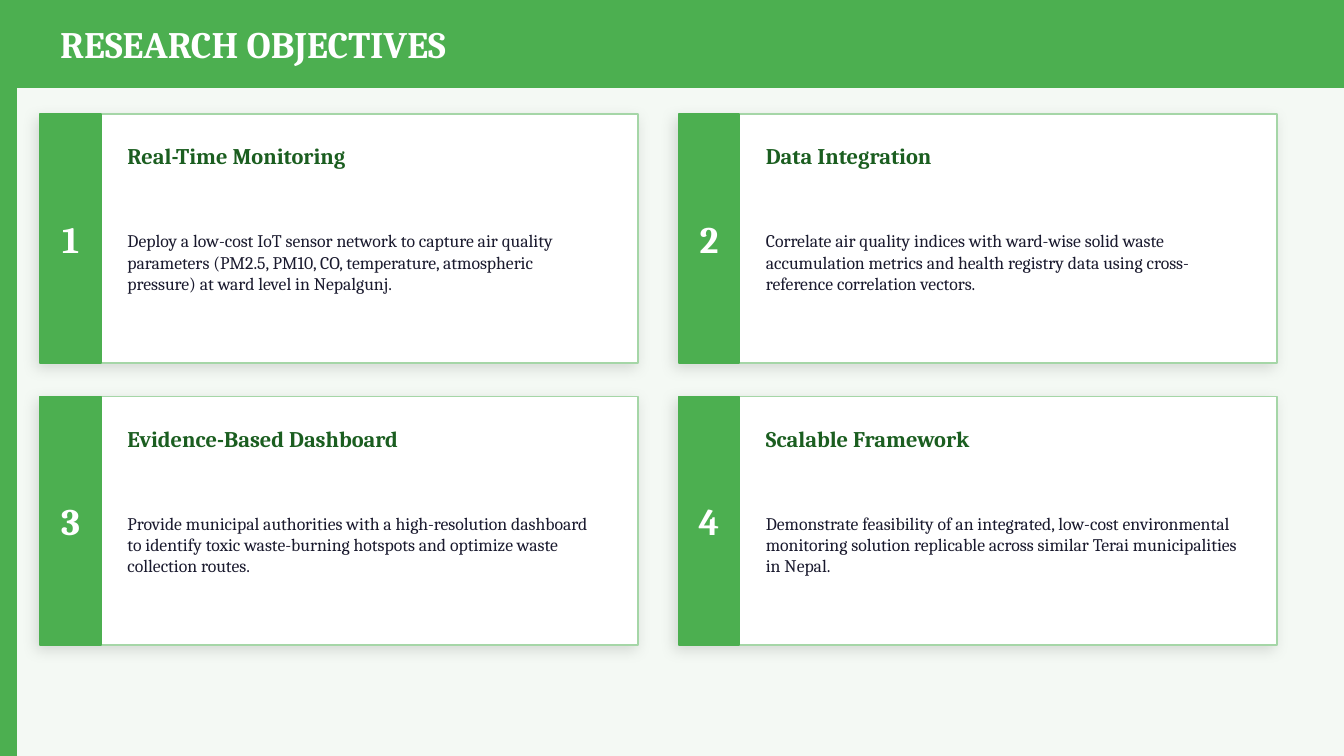
from lxml import etree
from pptx import Presentation
from pptx.dml.color import RGBColor
from pptx.enum.shapes import MSO_SHAPE
from pptx.enum.text import MSO_ANCHOR, PP_ALIGN
from pptx.oxml import parse_xml
from pptx.util import Pt

RECT = MSO_SHAPE.RECTANGLE
MIDDLE = MSO_ANCHOR.MIDDLE
LEFT, CENTER = PP_ALIGN.LEFT, PP_ALIGN.CENTER
PX = 4572
GREEN, PALE_GREEN, WHITE = "4CAF50", "A5D6A7", "FFFFFF"
SHADOW = (
    '<a:outerShdw xmlns:a="http://schemas.openxmlformats.org/drawingml/2006/main" '
    'blurRad="101600" dist="38100" dir="8100000" algn="bl" rotWithShape="0">'
    '<a:srgbClr val="000000"><a:alpha val="12000"/></a:srgbClr></a:outerShdw>'
)
HEADING = {"size": Pt(20), "bold": True, "name": "Cambria"}
CARD_TITLE = {"size": Pt(12), "bold": True, "name": "Cambria"}
BODY = {"size": Pt(9.5), "bold": False, "name": "Cambria"}

rgb = RGBColor.from_string
prs = Presentation()
prs.slide_width, prs.slide_height = 2000 * PX, 1125 * PX
s = prs.slides.add_slide(prs.slide_layouts[6])
s.background.fill.solid()
s.background.fill.fore_color.rgb = rgb("F4F9F4")


def add_rect(x, y, w, h, fill, line):
    sp = s.shapes.add_shape(RECT, x * PX, y * PX, w * PX, h * PX)
    sp.shadow.inherit = False
    sp.fill.solid()
    sp.fill.fore_color.rgb = rgb(fill)
    sp.line.color.rgb = rgb(line)
    sp.line.width = Pt(1)
    return sp


def add_text(x, y, w, h, text, fmt, color, align=LEFT):
    tf = s.shapes.add_textbox(x * PX, y * PX, w * PX, h * PX).text_frame
    tf.word_wrap = True
    tf.vertical_anchor = MIDDLE
    p = tf.paragraphs[0]
    p.alignment = align
    r = p.add_run()
    r.text = text
    for key, value in fmt.items():
        setattr(r.font, key, value)
    r.font.color.rgb = rgb(color)


add_rect(0, 0, 24, 1125, GREEN, GREEN)
add_rect(24, 0, 1976, 130, GREEN, GREEN)
add_text(70, 20, 1860, 90, "RESEARCH OBJECTIVES", HEADING, WHITE)

objectives = [
    ("Real-Time Monitoring",
     "Deploy a low-cost IoT sensor network to capture air quality parameters "
     "(PM2.5, PM10, CO, temperature, atmospheric pressure) at ward level in Nepalgunj."),
    ("Data Integration",
     "Correlate air quality indices with ward-wise solid waste accumulation metrics "
     "and health registry data using cross-reference correlation vectors."),
    ("Evidence-Based Dashboard",
     "Provide municipal authorities with a high-resolution dashboard to identify "
     "toxic waste-burning hotspots and optimize waste collection routes."),
    ("Scalable Framework",
     "Demonstrate feasibility of an integrated, low-cost environmental monitoring "
     "solution replicable across similar Terai municipalities in Nepal."),
]

for i, (title, body) in enumerate(objectives):
    row, col = divmod(i, 2)
    x, y = 60 + col * 950, 170 + row * 420
    card = add_rect(x, y, 890, 370, WHITE, PALE_GREEN)
    effects = card.element.spPr.find("{*}effectLst")
    effects.append(parse_xml(SHADOW))
    add_rect(x, y, 90, 370, GREEN, GREEN)
    add_text(x, y, 90, 370, str(i + 1), HEADING, WHITE, CENTER)
    add_text(x + 110, y + 24, 750, 76, title, CARD_TITLE, "1B5E20")
    add_text(x + 110, y + 100, 750, 240, body, BODY, "1A1A2E")

prs.save("out.pptx")
